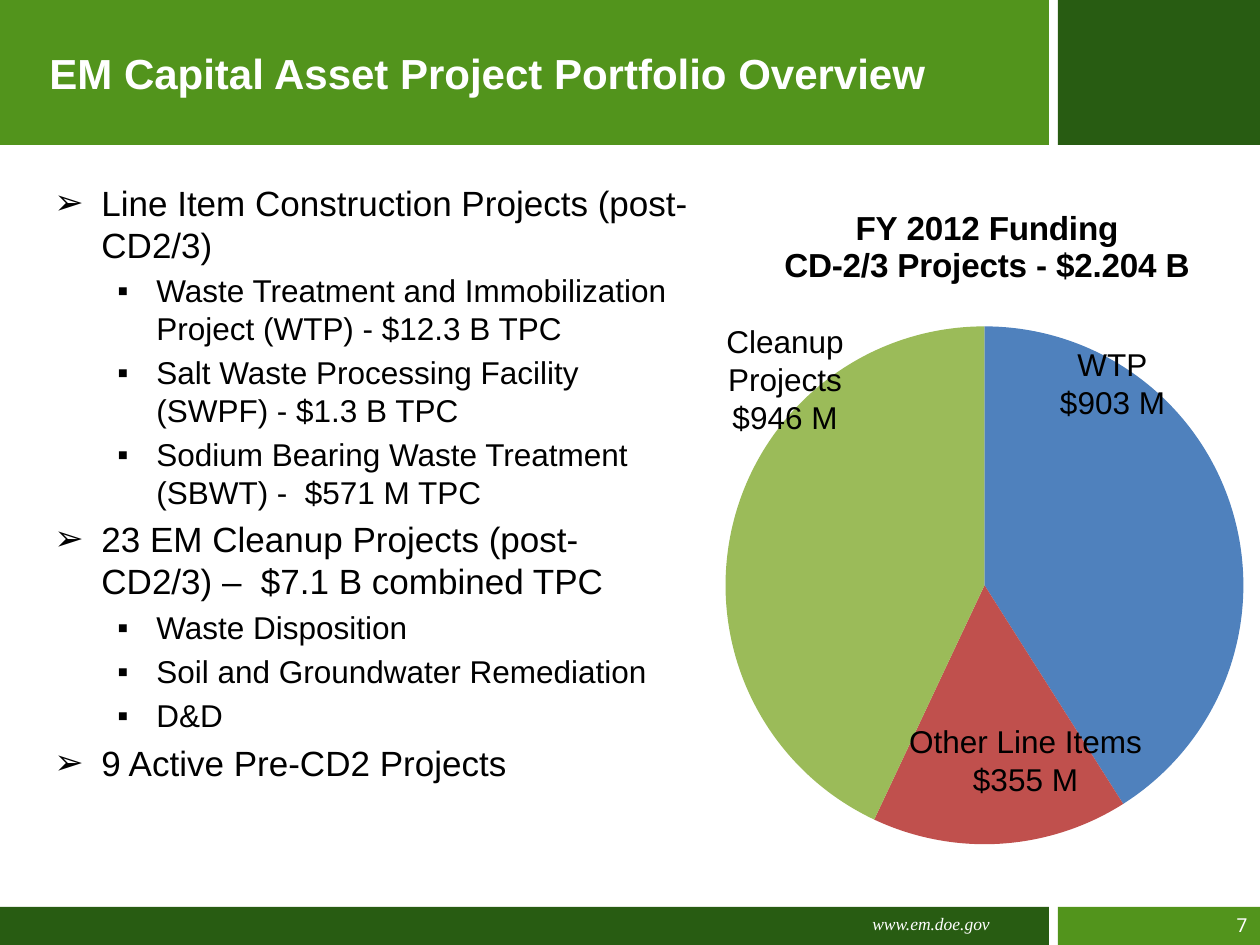
from dataclasses import dataclass

from lxml.etree import SubElement
from pptx import Presentation
from pptx.chart.data import CategoryChartData
from pptx.dml.color import RGBColor
from pptx.enum.chart import XL_CHART_TYPE
from pptx.enum.shapes import MSO_SHAPE
from pptx.enum.text import MSO_ANCHOR, PP_ALIGN
from pptx.oxml import parse_xml
from pptx.oxml.ns import nsdecls, qn
from pptx.util import Pt


@dataclass(frozen=True)
class Theme:
    """Colours, fonts and type sizes of the slide."""
    light: str = "52941C"
    dark: str = "285C12"
    white: str = "FFFFFF"
    black: str = "000000"
    slices: tuple = ("4F81BD", "C0504D", "9BBB59")
    sans: str = "Arial"
    serif: str = "Times New Roman"
    digit: str = "Roboto"
    head: int = 24
    chart: int = 19
    body: tuple = (20, 18)
    label: int = 18
    site: int = 10
    page: int = 11


THEME = Theme()
SCALE = 914400 / 126
BULLETS = (("➢", 47, 47), ("▪", 102, 39))
POINTS = (
    (0, "Line Item Construction Projects (post-CD2/3)"),
    (1, "Waste Treatment and Immobilization Project (WTP) - $12.3 B TPC"),
    (1, "Salt Waste Processing Facility (SWPF) - $1.3 B TPC"),
    (1, "Sodium Bearing Waste Treatment (SBWT) -  $571 M TPC"),
    (0, "23 EM Cleanup Projects (post-CD2/3) –  $7.1 B combined TPC"),
    (1, "Waste Disposition"),
    (1, "Soil and Groundwater Remediation"),
    (1, "D&D"),
    (0, "9 Active Pre-CD2 Projects"),
)
SHARES = (41, 16, 43)
LABELS = (
    ((338, 163, 131, 90), ("WTP", "$903 M")),
    ((186, 540, 261, 90), ("Other Line Items", "$355 M")),
    ((4, 140, 144, 128), ("Cleanup", "Projects", "$946 M")),
)


def px(num):
    """Turn a length in px into EMU."""
    return round(num * SCALE)


def place(box):
    """Turn a px box into EMU values."""
    return [px(num) for num in box]


def write(para, text, size, color, face=THEME.sans, bold=False, slant=False):
    """Add one styled run to a paragraph."""
    run = para.add_run()
    run.text = text
    font = run.font
    font.name, font.size = face, Pt(size)
    font.bold, font.italic = bold, slant
    font.color.rgb = RGBColor.from_string(color)


def paras(frame, count):
    """Give a frame this many paragraphs."""
    return [frame.paragraphs[0]] + [frame.add_paragraph() for _ in range(count - 1)]


def frame_in(slide, box, wrap=True, anchor=MSO_ANCHOR.TOP):
    """Add a text box and return its frame."""
    frame = slide.shapes.add_textbox(*place(box)).text_frame
    frame.word_wrap, frame.vertical_anchor = wrap, anchor
    return frame


def draw_band(slide, box, left, right):
    """Draw a band split in a wide part and a corner part."""
    x, y, width, height = box
    wide, gap = 1049, 9
    parts = ((x, wide, left), (x + wide + gap, width - wide - gap, right))
    for start, span, color in parts:
        part = slide.shapes.add_shape(MSO_SHAPE.RECTANGLE, *place((start, y, span, height)))
        part.shadow.inherit = False
        part.fill.solid()
        part.fill.fore_color.rgb = RGBColor.from_string(color)
        part.line.fill.background()


def draw_head(slide, box):
    """Draw the top band with the title."""
    x, y, _, height = box
    draw_band(slide, box, THEME.light, THEME.dark)
    frame = frame_in(slide, (x + 37, y, 1016, height + 1), anchor=MSO_ANCHOR.MIDDLE)
    write(frame.paragraphs[0], "EM Capital Asset Project Portfolio Overview",
          THEME.head, THEME.white, bold=True)


def draw_foot(slide, box):
    """Draw the bottom band with the site and page number."""
    x, y, width, height = box
    draw_band(slide, box, THEME.dark, THEME.light)
    site = frame_in(slide, (x + 860, y + 1, 189, 33))
    site.margin_top = site.margin_bottom = px(5)
    write(site.paragraphs[0], "www.em.doe.gov", THEME.site, THEME.white,
          THEME.serif, slant=True)
    page = frame_in(slide, (x + width - 179, y, 179, height - 1))
    page.paragraphs[0].alignment = PP_ALIGN.RIGHT
    write(page.paragraphs[0], "7", THEME.page, THEME.white, THEME.digit)


def draw_list(slide, box):
    """Draw the two-level list of projects."""
    frame = frame_in(slide, box)
    for index, (para, (level, text)) in enumerate(zip(paras(frame, len(POINTS)), POINTS)):
        mark, left, hang = BULLETS[level]
        size = THEME.body[level]
        para.level = level
        props = para._p.get_or_add_pPr()
        props.set("marL", str(px(left)))
        props.set("indent", str(-px(hang)))
        SubElement(props, qn("a:buFont")).set("typeface", THEME.sans)
        SubElement(props, qn("a:buChar")).set("char", mark)
        if index:
            para.space_before = Pt(size * 0.2)
        write(para, text, size, THEME.black)


def lay_out(node, index, box, **sides):
    """Fix the place of a chart part as shares of the chart."""
    for old in node.findall(qn("c:layout")):
        node.remove(old)
    layout = parse_xml(f"<c:layout {nsdecls('c')}><c:manualLayout/></c:layout>")
    values = {**sides, "xMode": "edge", "yMode": "edge", **box}
    for key, value in values.items():
        SubElement(layout[0], qn(f"c:{key}")).set("val", str(value))
    node.insert(index, layout)


def draw_chart(slide, box):
    """Draw the funding pie with its title and labels."""
    data = CategoryChartData()
    data.categories = [str(num + 1) for num in range(len(SHARES))]
    data.add_series("Series 1", SHARES)
    chart = slide.shapes.add_chart(XL_CHART_TYPE.PIE, *place(box), data).chart
    chart.has_legend = False
    chart.font.name, chart.font.size = THEME.sans, Pt(THEME.label)
    chart.font.color.rgb = RGBColor.from_string(THEME.black)
    plot = chart.plots[0]
    plot.vary_by_categories = True
    for index, color in enumerate(THEME.slices):
        piece = plot.series[0].points[index].format
        piece.fill.solid()
        piece.fill.fore_color.rgb = RGBColor.from_string(color)
        piece.line.fill.background()

    lines = ("FY 2012 Funding", "CD-2/3 Projects - $2.204 B")
    title = chart.chart_title.text_frame
    for para, text in zip(paras(title, len(lines)), lines):
        para.alignment = PP_ALIGN.CENTER
        write(para, text, THEME.chart, THEME.black, bold=True)
    root = chart.element.find(qn("c:chart"))
    lay_out(root.find(qn("c:title")), 1, {"x": 0.13, "y": 0.04})
    lay_out(root.find(qn("c:plotArea")), 0,
            {"x": 0.03, "y": 0.21, "w": 0.94, "h": 0.73}, layoutTarget="inner")

    x, y, _, _ = box
    for (left, top, width, height), texts in LABELS:
        frame = frame_in(slide, (x + left, y + top, width, height), wrap=False)
        for para, text in zip(paras(frame, len(texts)), texts):
            para.alignment = PP_ALIGN.CENTER
            write(para, text, THEME.label, THEME.black)


def main():
    """Build the slide and save it."""
    deck = Presentation()
    deck.slide_width, deck.slide_height = px(1260), px(945)
    slide = deck.slides.add_slide(deck.slide_layouts[6])
    draw_head(slide, (0, 0, 1260, 145))
    draw_foot(slide, (0, 907, 1260, 38))
    draw_list(slide, (42, 175, 660, 665))
    draw_chart(slide, (709, 176, 551, 712))
    deck.save("out.pptx")


if __name__ == "__main__":
    main()
